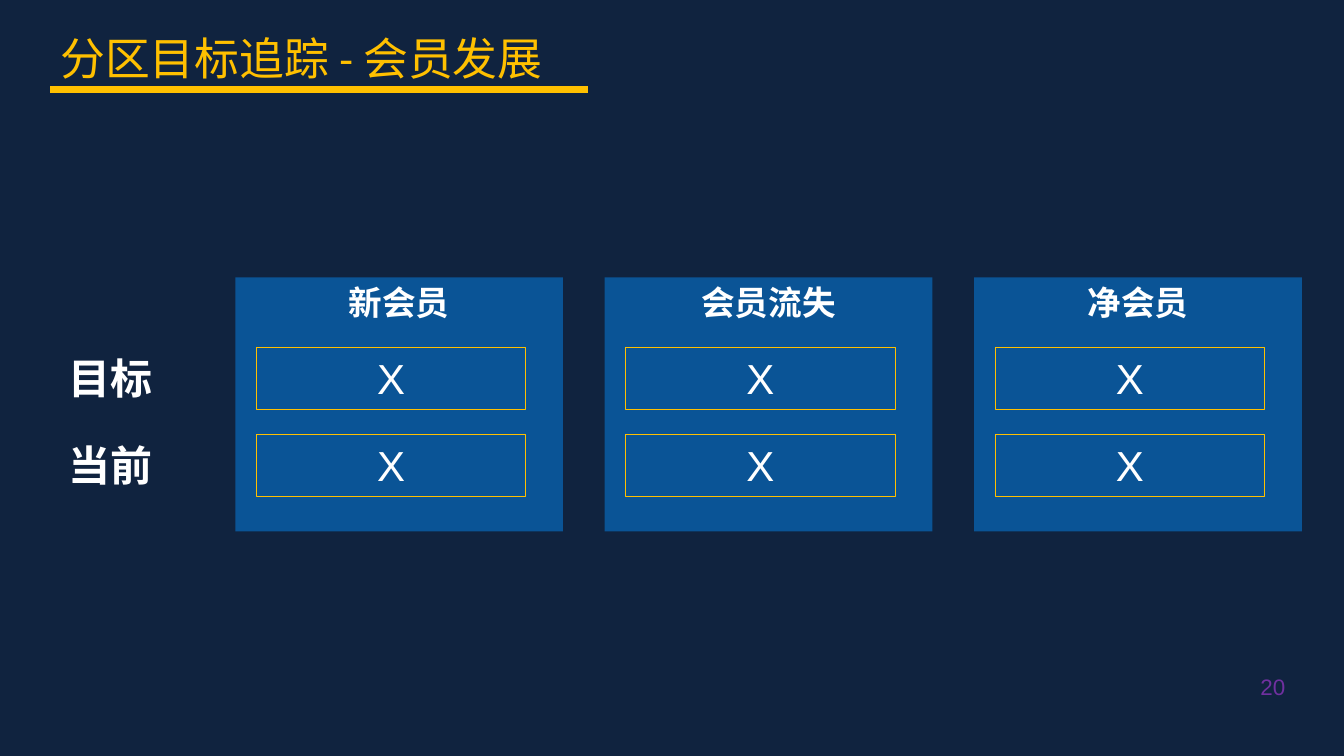
"""Build the division goal tracking slide for membership development."""
from lxml.etree import SubElement
from pptx import Presentation
from pptx.dml.color import RGBColor
from pptx.enum.shapes import MSO_CONNECTOR, MSO_SHAPE
from pptx.enum.text import MSO_ANCHOR, PP_ALIGN
from pptx.oxml.ns import qn
from pptx.util import Cm, Pt

NAVY = RGBColor(0x10, 0x23, 0x3F)
BLUE = RGBColor(0x0A, 0x54, 0x96)
GOLD = RGBColor(0xFF, 0xC0, 0x00)
WHITE = RGBColor(0xFF, 0xFF, 0xFF)
PURPLE = RGBColor(0x70, 0x30, 0xA0)

TITLE = "分区目标追踪 - 会员发展"
PAGE = "20"
ROWS = ["目标", "当前"]
CARDS = [("新会员", ["X", "X"]), ("会员流失", ["X", "X"]), ("净会员", ["X", "X"])]

MARGIN, RULE_Y, RULE_END = 1.27, 2.26, 14.82
LABEL_X, LABEL_W = 1.48, 4.45
CARD_X, CARD_Y, CARD_W, CARD_H, CARD_STEP = 5.93, 6.99, 8.26, 6.4, 9.31
BOX_INDENT, BOX_W, BOX_H = 0.53, 6.79, 1.55
ROW_Y, ROW_STEP = 8.76, 2.2

TITLE_FONT = {"name": "Calibri", "size": Pt(32), "bold": False}
LABEL_FONT = {"name": "Calibri", "size": Pt(30), "bold": True}
CARD_FONT = {"name": "Calibri", "size": Pt(24), "bold": True}
VALUE_FONT = {"name": "Arial", "size": Pt(30), "bold": False}
PAGE_FONT = {"name": "Arial", "size": Pt(16), "bold": False}


def write(sp, text, font, color, align=PP_ALIGN.LEFT, anchor=MSO_ANCHOR.TOP):
    tf = sp.text_frame
    tf.word_wrap = True
    tf.vertical_anchor = anchor
    p = tf.paragraphs[0]
    p.alignment = align
    r = p.add_run()
    r.text = text
    for key, value in font.items():
        setattr(r.font, key, value)
    r.font.color.rgb = color
    return tf


def add_text(s, box, *style):
    return write(s.shapes.add_textbox(*map(Cm, box)), *style)


def add_box(group, box, text, font, fill=None, line=None):
    sp = group.shapes.add_shape(MSO_SHAPE.RECTANGLE, *map(Cm, box))
    sp.shadow.inherit = False
    if fill:
        sp.fill.solid()
        sp.fill.fore_color.rgb = fill
    else:
        sp.fill.background()
    if line:
        sp.line.color.rgb = line
        sp.line.width = Pt(0.75)
    else:
        sp.line.fill.background()
    write(sp, text, font, WHITE, PP_ALIGN.CENTER)


def main():
    prs = Presentation()
    prs.slide_width, prs.slide_height = Cm(33.87), Cm(19.05)
    s = prs.slides.add_slide(prs.slide_layouts[6])
    s.background.fill.solid()
    s.background.fill.fore_color.rgb = NAVY

    tf = add_text(s, (30.84, 16.84, 1.55, 0.94), PAGE, PAGE_FONT, PURPLE,
                  PP_ALIGN.RIGHT, MSO_ANCHOR.MIDDLE)
    tf.margin_left = tf.margin_right = 0
    add_text(s, (MARGIN, 0.64, 19.48, 1.63), TITLE, TITLE_FONT, GOLD)

    rule = s.shapes.add_connector(MSO_CONNECTOR.STRAIGHT, Cm(MARGIN), Cm(RULE_Y),
                                  Cm(RULE_END), Cm(RULE_Y))
    rule.line.color.rgb = GOLD
    rule.line.width = Pt(4.5)
    SubElement(rule.line._get_or_add_ln().getparent(), qn("a:effectLst"))

    row_tops = [ROW_Y + i * ROW_STEP for i in range(len(ROWS))]
    for label, y in zip(ROWS, row_tops):
        add_text(s, (LABEL_X, y, LABEL_W, BOX_H), label, LABEL_FONT, WHITE)

    for i, (heading, values) in enumerate(CARDS):
        x = CARD_X + i * CARD_STEP
        group = s.shapes.add_group_shape()
        add_box(group, (x, CARD_Y, CARD_W, CARD_H), heading, CARD_FONT, fill=BLUE)
        for value, y in zip(values, row_tops):
            add_box(group, (x + BOX_INDENT, y, BOX_W, BOX_H), value, VALUE_FONT, line=GOLD)

    prs.save("out.pptx")


if __name__ == "__main__":
    main()
